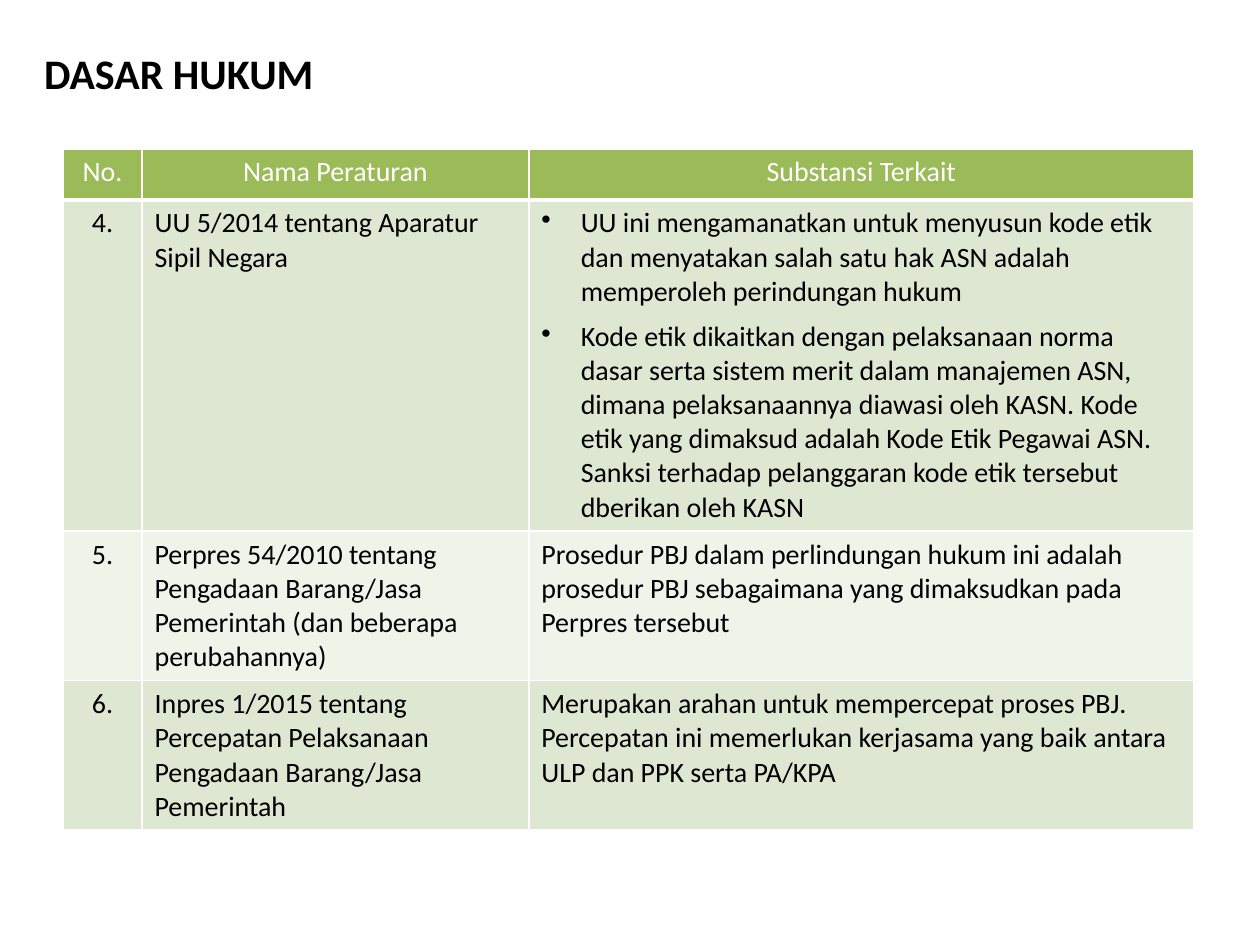
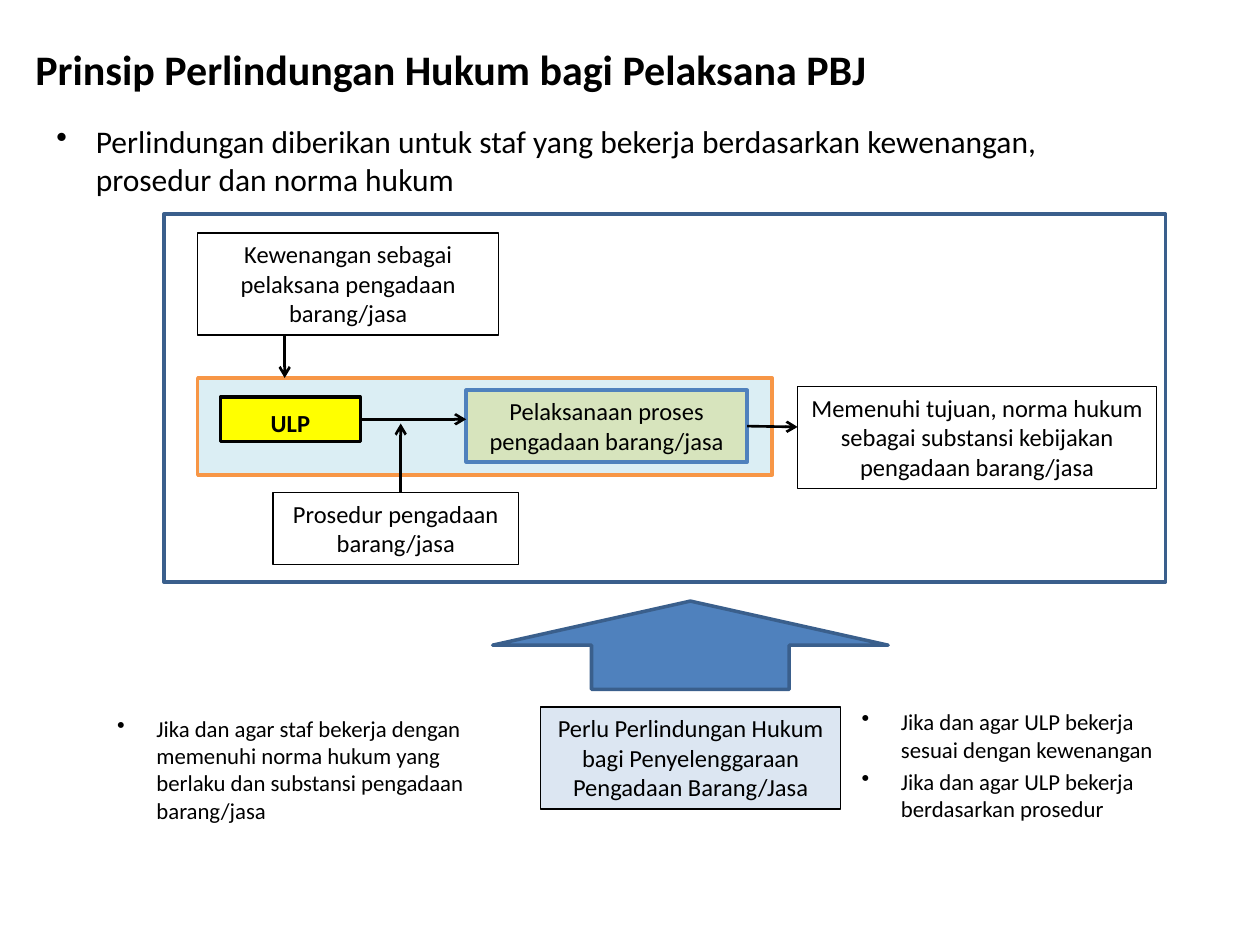
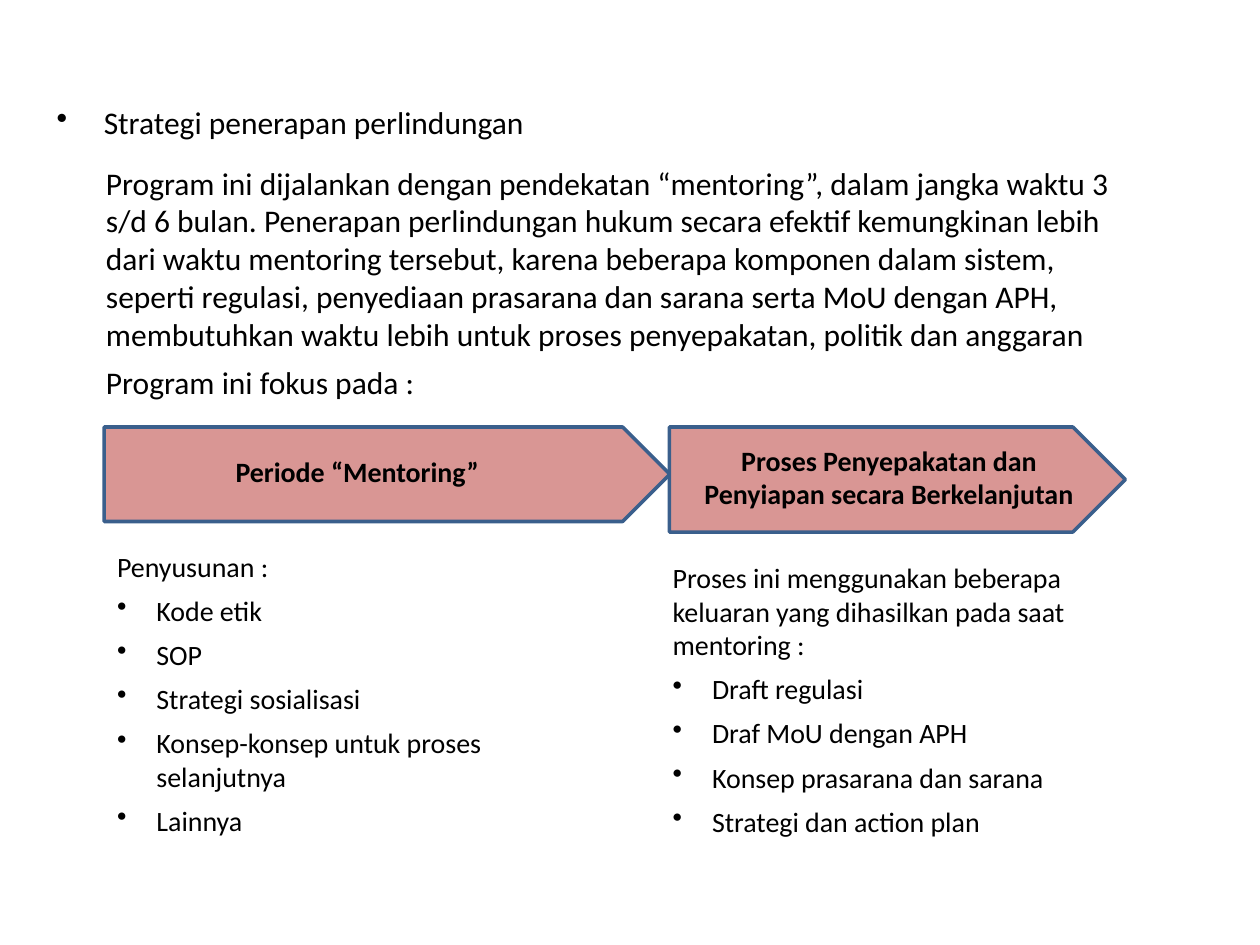
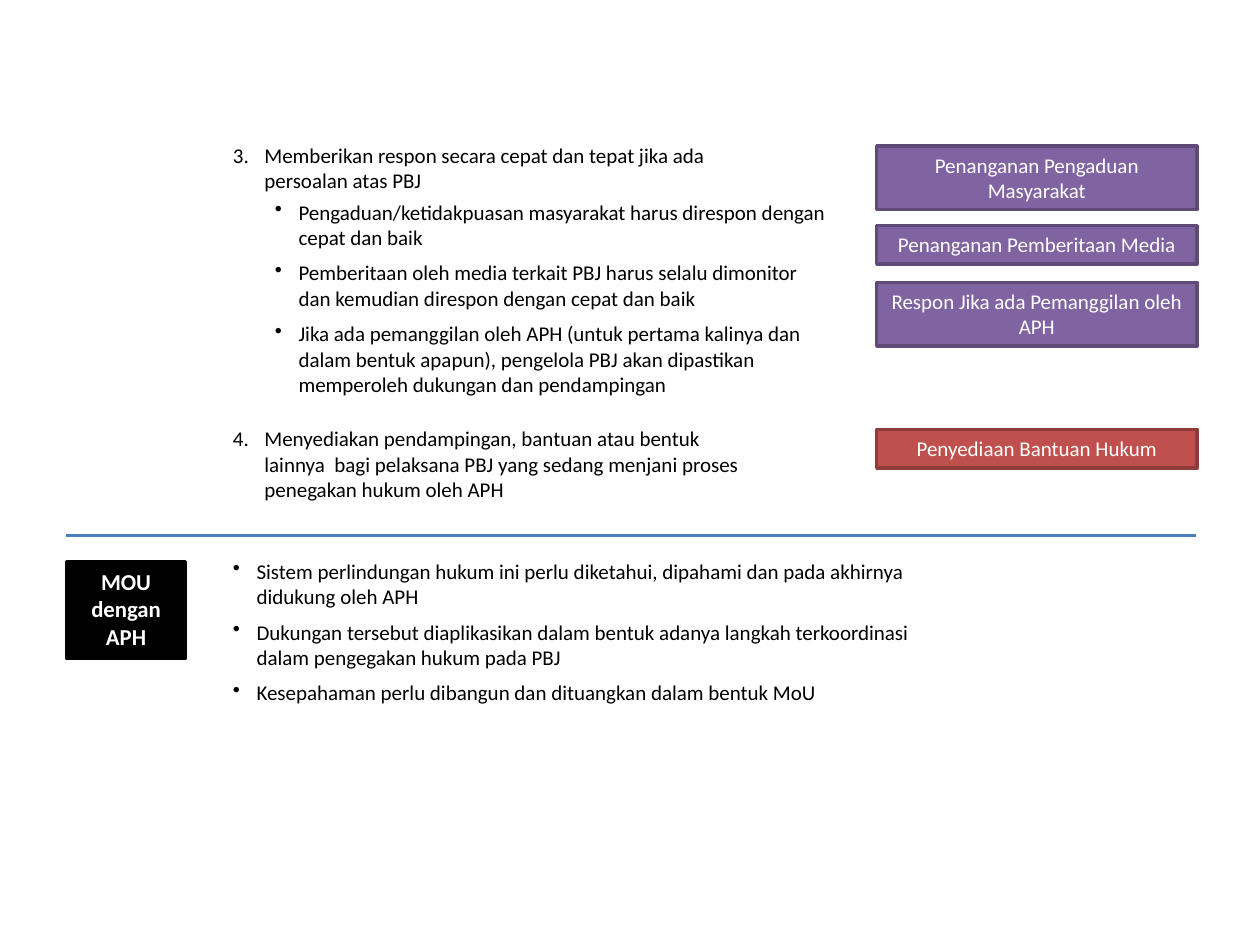
from dataclasses import dataclass
from typing import Optional, Sequence

from lxml.etree import SubElement
from pptx import Presentation
from pptx.dml.color import RGBColor
from pptx.enum.shapes import MSO_CONNECTOR, MSO_SHAPE
from pptx.enum.text import MSO_ANCHOR, MSO_AUTO_SIZE, PP_ALIGN
from pptx.oxml.ns import qn
from pptx.presentation import Presentation as PresentationType
from pptx.shapes.autoshape import Shape
from pptx.slide import Slide
from pptx.table import _Cell as Cell
from pptx.text.text import TextFrame
from pptx.util import Pt

FONT = "Calibri"
BLACK = RGBColor(0x00, 0x00, 0x00)
WHITE = RGBColor(0xFF, 0xFF, 0xFF)
GREEN = RGBColor(0x9B, 0xBB, 0x59)
GREEN_BAND = RGBColor(0xDE, 0xE7, 0xD1)
GREEN_PALE = RGBColor(0xEF, 0xF3, 0xEA)
GREEN_LIGHT = RGBColor(0xD7, 0xE4, 0xBD)
BLUE = RGBColor(0x4F, 0x81, 0xBD)
BLUE_DARK = RGBColor(0x3A, 0x5F, 0x8C)
BLUE_RULE = RGBColor(0x4B, 0x7E, 0xBC)
BLUE_PALE = RGBColor(0xDC, 0xE6, 0xF2)
AQUA_PALE = RGBColor(0xDB, 0xEE, 0xF4)
ORANGE = RGBColor(0xF7, 0x96, 0x46)
YELLOW = RGBColor(0xFF, 0xFF, 0x00)
PINK = RGBColor(0xD9, 0x96, 0x94)
PURPLE = RGBColor(0x80, 0x64, 0xA2)
PURPLE_DARK = RGBColor(0x5F, 0x4A, 0x78)
RED = RGBColor(0xC0, 0x50, 0x4D)
RED_DARK = RGBColor(0x8E, 0x3B, 0x39)

HANG = 22.5
NARROW_HANG = 13.5
NUMBER_HANG = 18


@dataclass(frozen=True)
class Line:
    """One paragraph, with a bullet when it hangs and a number when it has one."""
    text: str
    hang: float = 0
    number: Optional[int] = None


@dataclass(frozen=True)
class Style:
    """Look of the text in a box or cell."""
    size: float
    color: RGBColor = BLACK
    bold: bool = False
    align: PP_ALIGN = PP_ALIGN.LEFT
    after: float = 0
    spacing: float = 1.0


@dataclass(frozen=True)
class Bounds:
    """Place and size in points."""
    left: float
    top: float
    width: float
    height: float

    def lengths(self) -> tuple[Pt, Pt, Pt, Pt]:
        """Return the four values as lengths."""
        return Pt(self.left), Pt(self.top), Pt(self.width), Pt(self.height)


@dataclass(frozen=True)
class Panel:
    """A filled and outlined shape, with or without text."""
    bounds: Bounds
    fill: Optional[RGBColor]
    outline: RGBColor
    weight: float = 2
    text: str = ""
    style: Optional[Style] = None
    kind: MSO_SHAPE = MSO_SHAPE.RECTANGLE


@dataclass(frozen=True)
class TextBox:
    """A plain block of paragraphs."""
    bounds: Bounds
    lines: Sequence[Line]
    style: Style


@dataclass(frozen=True)
class Arrow:
    """A straight line between two points."""
    start: tuple[float, float]
    end: tuple[float, float]
    color: RGBColor = BLACK
    weight: float = 1.5
    head: bool = True


TITLE = Style(24, bold=True)
LEAD = Style(18, after=6)
DIAGRAM = Style(14, align=PP_ALIGN.CENTER)
DIAGRAM_BOLD = Style(14, bold=True, align=PP_ALIGN.CENTER, spacing=1.15)
REASON = Style(13, after=3)
PHASE = Style(16, bold=True, align=PP_ALIGN.CENTER)
BODY = Style(16, after=6)
BODY_CENTER = Style(16, align=PP_ALIGN.CENTER, after=6)
HEADER = Style(16, WHITE, align=PP_ALIGN.CENTER, after=6)
SMALL = Style(12, after=6)
LABEL = Style(12, WHITE, align=PP_ALIGN.CENTER)
MOU = Style(13, WHITE, bold=True, align=PP_ALIGN.CENTER)


def bullets(*texts: str, hang: float = HANG) -> list[Line]:
    """Make a bulleted line of each text."""
    return [Line(text, hang) for text in texts]


def write(text_frame: TextFrame, lines: Sequence[Line], style: Style) -> None:
    """Fill a text frame with styled paragraphs."""
    text_frame.word_wrap = True
    text_frame.text = "\n".join(line.text for line in lines)
    for paragraph, line in zip(text_frame.paragraphs, lines):
        if line.hang:
            properties = paragraph._p.get_or_add_pPr()
            properties.set("marL", str(Pt(line.hang)))
            properties.set("indent", str(-Pt(line.hang)))
            if line.number is None:
                SubElement(properties, qn("a:buChar"), char="•")
            else:
                SubElement(properties, qn("a:buAutoNum"), type="arabicPeriod", startAt=str(line.number))
        paragraph.alignment = style.align
        paragraph.space_after = Pt(style.after)
        paragraph.line_spacing = style.spacing
        for run in paragraph.runs:
            run.font.name = FONT
            run.font.size = Pt(style.size)
            run.font.bold = style.bold
            run.font.color.rgb = style.color


def add_title_slide(presentation: PresentationType, title: str, bounds: Bounds) -> Slide:
    """Add a slide whose title sits at the given place."""
    slide = presentation.slides.add_slide(presentation.slide_layouts.get_by_name("Title Only"))
    placeholder = slide.shapes.title
    placeholder.left, placeholder.top, placeholder.width, placeholder.height = bounds.lengths()
    write(placeholder.text_frame, [Line(title)], TITLE)
    placeholder.text_frame.vertical_anchor = MSO_ANCHOR.TOP
    placeholder.text_frame.auto_size = MSO_AUTO_SIZE.NONE
    return slide


def add_blank_slide(presentation: PresentationType) -> Slide:
    """Add a slide without placeholders."""
    return presentation.slides.add_slide(presentation.slide_layouts.get_by_name("Blank"))


def add_panel(slide: Slide, panel: Panel) -> Shape:
    """Draw a panel."""
    shape = slide.shapes.add_shape(panel.kind, *panel.bounds.lengths())
    shape.shadow.inherit = False
    if panel.fill is None:
        shape.fill.background()
    else:
        shape.fill.solid()
        shape.fill.fore_color.rgb = panel.fill
    shape.line.color.rgb = panel.outline
    shape.line.width = Pt(panel.weight)
    if panel.style:
        write(shape.text_frame, [Line(panel.text)], panel.style)
        shape.text_frame.vertical_anchor = MSO_ANCHOR.TOP
    return shape


def add_text(slide: Slide, box: TextBox) -> None:
    """Draw a text box."""
    shape = slide.shapes.add_textbox(*box.bounds.lengths())
    write(shape.text_frame, box.lines, box.style)


def add_arrow(slide: Slide, arrow: Arrow, source: Optional[Shape] = None) -> None:
    """Draw a line, joined to the right side of its source if there is one."""
    points = [Pt(value) for value in (*arrow.start, *arrow.end)]
    connector = slide.shapes.add_connector(MSO_CONNECTOR.STRAIGHT, *points)
    connector.line.color.rgb = arrow.color
    connector.line.width = Pt(arrow.weight)
    if arrow.head:
        SubElement(connector.line._get_or_add_ln(), qn("a:tailEnd"), type="arrow")
    SubElement(connector._element.spPr, qn("a:effectLst"))
    if source is not None:
        connector.begin_connect(source, 3)


def format_cell(cell: Cell, fill: RGBColor, bottom: float) -> None:
    """Give a cell white borders and a fill."""
    properties = cell._tc.get_or_add_tcPr()
    for edge, weight in (("lnL", 1), ("lnR", 1), ("lnT", 1), ("lnB", bottom)):
        border = SubElement(properties, qn(f"a:{edge}"), w=str(Pt(weight)))
        SubElement(SubElement(border, qn("a:solidFill")), qn("a:srgbClr"), val=str(WHITE))
    cell.fill.solid()
    cell.fill.fore_color.rgb = fill


def build_legal_basis(presentation: PresentationType) -> None:
    """Build the table of regulations."""
    slide = add_title_slide(presentation, "DASAR HUKUM", Bounds(18, 23.76, 170, 36))
    rows = [
        [[Line("No.")], [Line("Nama Peraturan")], [Line("Substansi Terkait")]],
        [
            [Line("4.")],
            [Line("UU 5/2014 tentang Aparatur Sipil Negara")],
            bullets(
                "UU ini mengamanatkan untuk menyusun kode etik dan menyatakan salah satu hak ASN "
                "adalah memperoleh perindungan hukum",
                "Kode etik dikaitkan dengan pelaksanaan norma dasar serta sistem merit dalam "
                "manajemen ASN, dimana pelaksanaannya diawasi oleh KASN. Kode etik yang dimaksud "
                "adalah Kode Etik Pegawai ASN. Sanksi terhadap pelanggaran kode etik tersebut "
                "dberikan oleh KASN",
            ),
        ],
        [
            [Line("5.")],
            [Line("Perpres 54/2010 tentang Pengadaan Barang/Jasa Pemerintah (dan beberapa perubahannya)")],
            [Line("Prosedur PBJ dalam perlindungan hukum ini adalah prosedur PBJ sebagaimana yang "
                  "dimaksudkan pada Perpres tersebut")],
        ],
        [
            [Line("6.")],
            [Line("Inpres 1/2015 tentang Percepatan Pelaksanaan Pengadaan Barang/Jasa Pemerintah")],
            [Line("Merupakan arahan untuk mempercepat proses PBJ. Percepatan ini memerlukan "
                  "kerjasama yang baik antara ULP dan PPK serta PA/KPA")],
        ],
    ]
    widths = (45.2, 221, 380)
    heights = (29.2, 186, 84, 84)
    bounds = Bounds(36, 85, sum(widths), sum(heights))
    table = slide.shapes.add_table(len(rows), len(widths), *bounds.lengths()).table
    for column, width in zip(table.columns, widths):
        column.width = Pt(width)
    for row, height in zip(table.rows, heights):
        row.height = Pt(height)
    fills = (GREEN, GREEN_BAND, GREEN_PALE, GREEN_BAND)
    for row_index, row in enumerate(rows):
        for column_index, lines in enumerate(row):
            cell = table.cell(row_index, column_index)
            body = BODY_CENTER if column_index == 0 else BODY
            write(cell.text_frame, lines, HEADER if row_index == 0 else body)
            format_cell(cell, fills[row_index], 3 if row_index == 0 else 1)


def build_principle(presentation: PresentationType) -> None:
    """Build the diagram of the protection principle."""
    slide = add_title_slide(
        presentation, "Prinsip Perlindungan Hukum bagi Pelaksana PBJ", Bounds(13, 21, 585, 36))
    backdrop = [
        Panel(Bounds(309, 404, 171.4, 58.3), BLUE_PALE, BLACK, 0.75,
              "Perlu Perlindungan Hukum bagi Penyelenggaraan Pengadaan Barang/Jasa", DIAGRAM),
        Panel(Bounds(281.5, 343.5, 226, 50.4), BLUE, BLUE_DARK, kind=MSO_SHAPE.UP_ARROW),
        Panel(Bounds(113, 216, 328.3, 55.4), AQUA_PALE, ORANGE),
        Panel(Bounds(113, 133.2, 172, 58.3), WHITE, BLACK, 0.75,
              "Kewenangan sebagai pelaksana pengadaan barang/jasa", DIAGRAM),
        Panel(Bounds(156, 281.5, 140.4, 41), WHITE, BLACK, 0.75,
              "Prosedur pengadaan barang/jasa", DIAGRAM),
        Panel(Bounds(455.8, 221, 205.2, 58.3), WHITE, BLACK, 0.75,
              "Memenuhi tujuan, norma hukum sebagai substansi kebijakan pengadaan barang/jasa",
              DIAGRAM),
        Panel(Bounds(93.6, 122.4, 572.4, 210.2), None, BLUE_DARK),
    ]
    for panel in backdrop:
        add_panel(slide, panel)
    unit = add_panel(slide, Panel(
        Bounds(126, 227, 80, 25.2), YELLOW, BLACK, 2, "ULP", DIAGRAM_BOLD))
    process = add_panel(slide, Panel(
        Bounds(266.4, 223, 160.6, 41), GREEN_LIGHT, BLUE, 2,
        "Pelaksanaan proses pengadaan barang/jasa", DIAGRAM))
    add_arrow(slide, Arrow((206, 239.6), (266.4, 239.6)), unit)
    add_arrow(slide, Arrow((427, 243.5), (455.8, 244)), process)
    add_arrow(slide, Arrow((229, 281.5), (229, 242)))
    add_arrow(slide, Arrow((162.7, 191.5), (162.7, 216)))
    boxes = [
        TextBox(Bounds(485.3, 401, 203.8, 73.4), bullets(
            "Jika dan agar ULP bekerja sesuai dengan kewenangan",
            "Jika dan agar ULP bekerja berdasarkan prosedur"), REASON),
        TextBox(Bounds(59.8, 404.6, 215.3, 70.6), bullets(
            "Jika dan agar staf bekerja dengan memenuhi norma hukum yang berlaku dan substansi "
            "pengadaan barang/jasa"), REASON),
        TextBox(Bounds(25.2, 66.2, 604, 51), bullets(
            "Perlindungan diberikan untuk staf yang bekerja berdasarkan kewenangan, prosedur dan "
            "norma hukum"), LEAD),
    ]
    for box in boxes:
        add_text(slide, box)


def build_strategy(presentation: PresentationType) -> None:
    """Build the two phases of the strategy."""
    slide = add_blank_slide(presentation)
    for bounds in (Bounds(59.5, 244, 323.3, 54), Bounds(382.5, 244, 260.6, 60)):
        add_panel(slide, Panel(bounds, PINK, BLUE_DARK, kind=MSO_SHAPE.PENTAGON))
    boxes = [
        TextBox(Bounds(25.2, 55.4, 638, 34.6),
                bullets("Strategi penerapan perlindungan", hang=27), LEAD),
        TextBox(Bounds(53.5, 90, 594.7, 144), [
            Line("Program ini dijalankan dengan pendekatan “mentoring”, dalam jangka waktu 3 s/d 6 "
                 "bulan. Penerapan perlindungan hukum secara efektif kemungkinan lebih dari waktu "
                 "mentoring tersebut, karena beberapa komponen dalam sistem, seperti regulasi, "
                 "penyediaan prasarana dan sarana serta MoU dengan APH, membutuhkan waktu lebih "
                 "untuk proses penyepakatan, politik dan anggaran"),
            Line("Program ini fokus pada :")], LEAD),
        TextBox(Bounds(99.4, 256.3, 209.5, 26.6), [Line("Periode “Mentoring”")], PHASE),
        TextBox(Bounds(383.8, 249.8, 248.4, 46),
                [Line("Proses Penyepakatan dan Penyiapan secara Berkelanjutan")], PHASE),
        TextBox(Bounds(59.8, 310.3, 272.2, 173.5), [
            Line("Penyusunan :"),
            *bullets("Kode etik", "SOP", "Strategi sosialisasi",
                     "Konsep-konsep untuk proses selanjutnya", "Lainnya")], BODY),
        TextBox(Bounds(377.3, 316.8, 294.5, 167), [
            Line("Proses ini menggunakan beberapa keluaran yang dihasilkan pada saat mentoring :"),
            *bullets("Draft regulasi", "Draf MoU dengan APH", "Konsep prasarana dan sarana",
                     "Strategi dan action plan")], BODY),
    ]
    for box in boxes:
        add_text(slide, box)


def build_response(presentation: PresentationType) -> None:
    """Build the response steps and the agreement below them."""
    slide = add_blank_slide(presentation)
    boxes = [
        TextBox(Bounds(126, 77.8, 306, 36), [
            Line("Memberikan respon secara cepat dan tepat jika ada persoalan atas PBJ",
                 NUMBER_HANG, 3)], SMALL),
        TextBox(Bounds(150, 110.2, 329.8, 121), bullets(
            "Pengaduan/ketidakpuasan masyarakat harus direspon dengan cepat dan baik",
            "Pemberitaan oleh media terkait PBJ harus selalu dimonitor dan kemudian direspon "
            "dengan cepat dan baik",
            "Jika ada pemanggilan oleh APH (untuk pertama kalinya dan dalam bentuk apapun), "
            "pengelola PBJ akan dipastikan memperoleh dukungan dan pendampingan",
            hang=NARROW_HANG), SMALL),
        TextBox(Bounds(126, 239.8, 306, 51), [
            Line("Menyediakan pendampingan, bantuan atau bentuk lainnya  bagi pelaksana PBJ yang "
                 "sedang menjani proses penegakan hukum oleh APH", NUMBER_HANG, 4)], SMALL),
        TextBox(Bounds(126, 315.4, 414, 92), bullets(
            "Sistem perlindungan hukum ini perlu diketahui, dipahami dan pada akhirnya didukung "
            "oleh APH",
            "Dukungan tersebut diaplikasikan dalam bentuk adanya langkah terkoordinasi dalam "
            "pengegakan hukum pada PBJ",
            "Kesepahaman perlu dibangun dan dituangkan dalam bentuk MoU",
            hang=NARROW_HANG), SMALL),
    ]
    for box in boxes:
        add_text(slide, box)
    labels = [
        (83.5, 36.4, PURPLE, PURPLE_DARK, "Penanganan Pengaduan Masyarakat"),
        (129, 22, PURPLE, PURPLE_DARK, "Penanganan Pemberitaan Media"),
        (161.5, 36.4, PURPLE, PURPLE_DARK, "Respon Jika ada Pemanggilan oleh APH"),
        (245.5, 22, RED, RED_DARK, "Penyediaan Bantuan Hukum"),
    ]
    for top, height, fill, outline, text in labels:
        add_panel(slide, Panel(Bounds(501, top, 183, height), fill, outline, 2, text, LABEL))
    add_arrow(slide, Arrow((38, 306), (683.3, 306), BLUE_RULE, 2.25, head=False))
    add_panel(slide, Panel(
        Bounds(38, 321, 68, 55), BLACK, BLACK, 2, "MOU dengan APH", MOU))


def main() -> None:
    """Build and save the presentation."""
    presentation = Presentation()
    presentation.slide_width = Pt(720)
    presentation.slide_height = Pt(540)
    build_legal_basis(presentation)
    build_principle(presentation)
    build_strategy(presentation)
    build_response(presentation)
    presentation.save("out.pptx")


if __name__ == "__main__":
    main()
